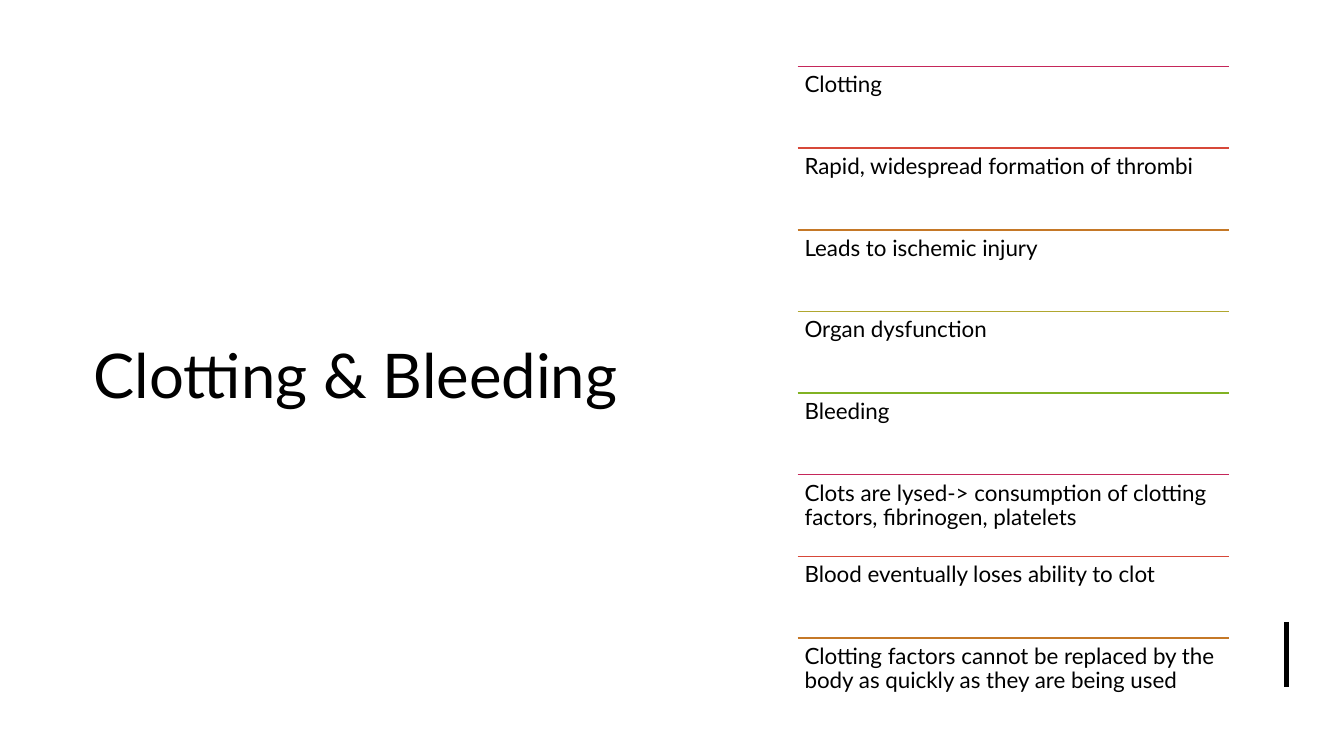
from itertools import cycle

from lxml.etree import SubElement
from pptx import Presentation
from pptx.dml.color import RGBColor
from pptx.enum.shapes import MSO_CONNECTOR as Connector
from pptx.enum.text import MSO_ANCHOR as Anchor
from pptx.oxml.ns import qn
from pptx.util import Inches, Pt

TITLE = "Clotting & Bleeding"
STEPS = [
    "Clotting",
    "Rapid, widespread formation of thrombi",
    "Leads to ischemic injury",
    "Organ dysfunction",
    "Bleeding",
    "Clots are lysed-> consumption of clotting factors, fibrinogen, platelets",
    "Blood eventually loses ability to clot",
    "Clotting factors cannot be replaced by the body as quickly as they are being used",
]
RULE_COLORS = ["C5275A", "D74839", "C57827", "B0A72F", "81B223"]
BLACK = "000000"
FONT = "Lato"
STEPS_LEFT, STEPS_TOP, STEPS_WIDTH, STEP_HEIGHT = 7.91, 0.66, 4.28, 0.81
ACCENT_X, ACCENT_TOP, ACCENT_BOTTOM = 12.76, 6.17, 6.82


def color(hex_code):
    return RGBColor.from_string(hex_code)


def add_rule(slide, start, end, hex_code, weight):
    ends = [Inches(value) for value in (*start, *end)]
    rule = slide.shapes.add_connector(Connector.STRAIGHT, *ends)
    rule.line.color.rgb = color(hex_code)
    rule.line.width = Pt(weight)
    SubElement(rule._element.spPr, qn("a:effectLst"))


def add_text(slide, box, text, size, inset, anchor):
    frame = slide.shapes.add_textbox(*[Inches(value) for value in box]).text_frame
    frame.word_wrap = True
    frame.vertical_anchor = anchor
    frame.margin_left = frame.margin_right = Inches(inset)
    frame.margin_top = frame.margin_bottom = Inches(inset)
    paragraph = frame.paragraphs[0]
    paragraph.text = text
    paragraph.line_spacing = 0.9
    paragraph.font.name = FONT
    paragraph.font.size = Pt(size)
    paragraph.font.color.rgb = color(BLACK)


def main():
    """Build the slide on clotting and bleeding."""
    deck = Presentation()
    deck.slide_width, deck.slide_height = Inches(13.33), Inches(7.5)
    slide = deck.slides.add_slide(deck.slide_layouts[6])

    add_text(slide, (0.83, 0.94, 5.93, 5.64), TITLE, 44, 0.1, Anchor.MIDDLE)
    add_rule(slide, (ACCENT_X, ACCENT_TOP), (ACCENT_X, ACCENT_BOTTOM), BLACK, 3)

    for index, (step, rule_color) in enumerate(zip(STEPS, cycle(RULE_COLORS))):
        top = STEPS_TOP + index * STEP_HEIGHT
        add_rule(slide, (STEPS_LEFT, top), (STEPS_LEFT + STEPS_WIDTH, top), rule_color, 1)
        box = (STEPS_LEFT, top, STEPS_WIDTH, STEP_HEIGHT)
        add_text(slide, box, step, 16, 0.07, Anchor.TOP)

    deck.save("out.pptx")


if __name__ == "__main__":
    main()
